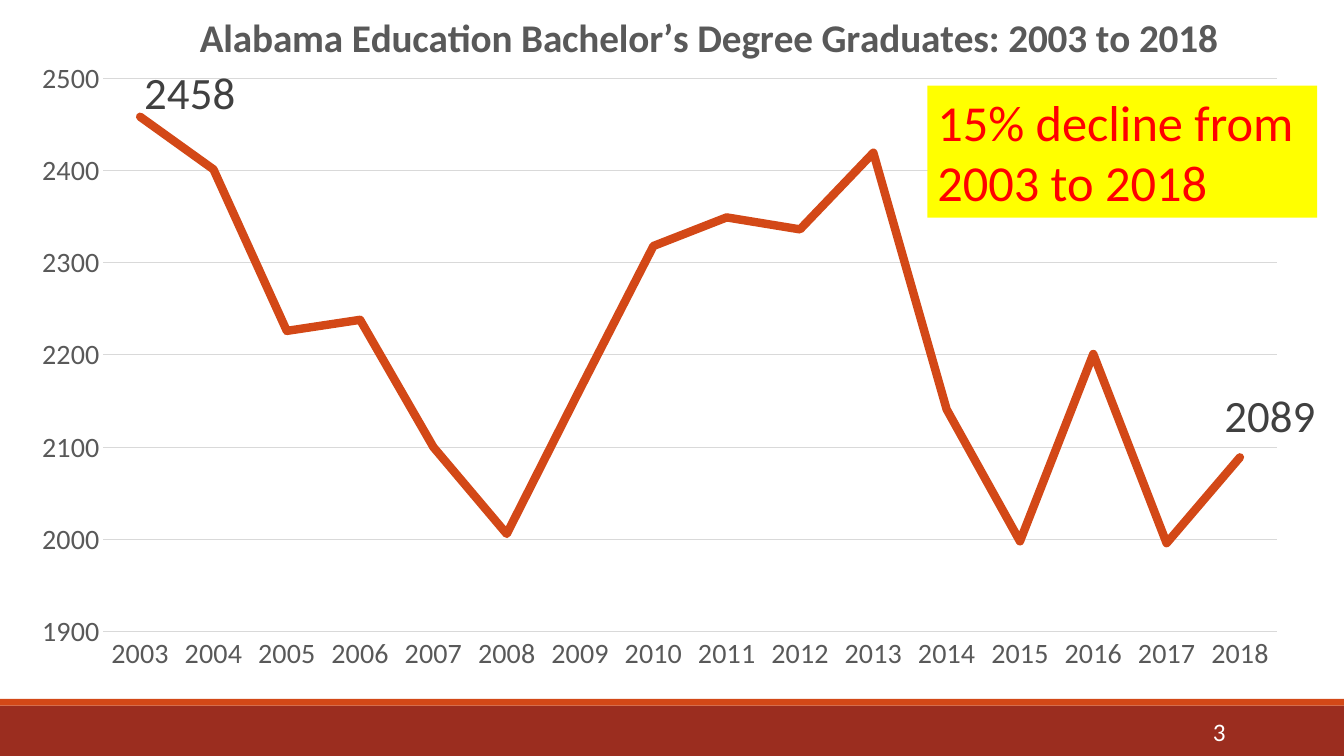
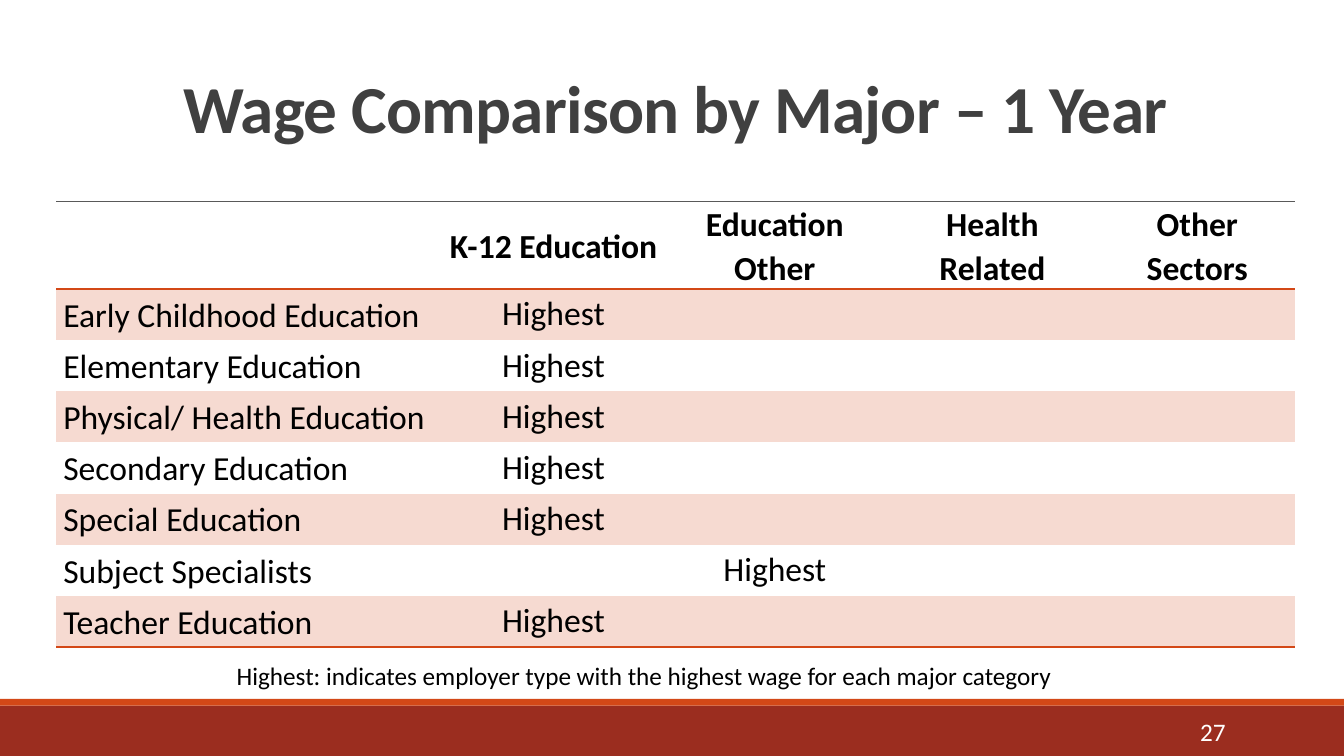
from dataclasses import dataclass

from lxml import etree
from pptx import Presentation
from pptx.chart.data import CategoryChartData
from pptx.dml.color import RGBColor
from pptx.enum.chart import XL_CHART_TYPE, XL_LABEL_POSITION, XL_TICK_MARK
from pptx.enum.shapes import MSO_SHAPE
from pptx.enum.text import MSO_ANCHOR, PP_ALIGN
from pptx.oxml import parse_xml
from pptx.oxml.ns import nsdecls, qn
from pptx.util import Emu, Inches, Pt

COLUMNS, ROWS = 160, 90
UNIT = Inches(1) / 12  # one grid column or row


@dataclass(frozen=True)
class Theme:
    font: str = "Calibri"
    accent: str = "D34817"
    band: str = "9B2D1F"
    tint: str = "F6DAD1"
    ink: str = "000000"
    title_ink: str = "404040"
    muted: str = "595959"
    grid: str = "D9D9D9"
    paper: str = "FFFFFF"
    alert: str = "FF0000"
    highlight: str = "FFFF00"
    title_size: int = 48
    callout_size: int = 36
    label_size: int = 32
    chart_title_size: int = 28
    table_size: int = 24
    axis_size: int = 20
    small_size: int = 18


THEME = Theme()


@dataclass(frozen=True)
class Box:
    """A rectangle counted in grid columns and rows."""
    left: float
    top: float
    width: float
    height: float

    def area(self, left, top, width, height):
        return Box(self.left + left, self.top + top, width, height)

    def place(self):
        return [Emu(round(n * UNIT)) for n in (self.left, self.top, self.width, self.height)]


def color(value):
    return RGBColor.from_string(value)


def style_font(font, size, ink, bold=False):
    font.name, font.size, font.bold = THEME.font, Pt(size), bold
    font.color.rgb = color(ink)


def write(frame, text, size, ink, bold=False, align=PP_ALIGN.LEFT, spacing=1.0):
    para = frame.paragraphs[0]
    span = para.add_run()
    span.text = text
    para.alignment, para.line_spacing = align, spacing
    style_font(para.font, size, ink, bold)
    return span


def add_text(page, box, text, size, ink, anchor=MSO_ANCHOR.TOP, **style):
    frame = page.shapes.add_textbox(*box.place()).text_frame
    frame.word_wrap = True
    frame.vertical_anchor = anchor
    return write(frame, text, size, ink, **style)


def add_block(page, box, fill):
    block = page.shapes.add_shape(MSO_SHAPE.RECTANGLE, *box.place())
    block.shadow.inherit = False
    block.fill.solid()
    block.fill.fore_color.rgb = color(fill)
    block.line.fill.background()
    return block


def add_page(deck, number):
    """Add a blank page with the footer bands and its number."""
    page = deck.slides.add_slide(deck.slide_layouts[6])
    box = Box(0, 0, COLUMNS, ROWS)
    add_block(page, box.area(0, 84, COLUMNS, 6), THEME.band)
    add_block(page, box.area(0, 83.2, COLUMNS, 0.8), THEME.accent)
    add_text(page, box.area(130, 84.7, 17.1, 4.8), number, THEME.small_size,
             THEME.paper, anchor=MSO_ANCHOR.MIDDLE, align=PP_ALIGN.RIGHT)
    return page, box


def set_layout(parent, index, inner=False, edge=False, **percent):
    """Give a chart element a manual layout, in percent of the chart's size."""
    for old in parent.findall(qn("c:layout")):
        parent.remove(old)
    layout = etree.Element(qn("c:layout"))
    manual = etree.SubElement(layout, qn("c:manualLayout"))
    if inner:
        etree.SubElement(manual, qn("c:layoutTarget")).set("val", "inner")
    if edge:
        for name in ("xMode", "yMode"):
            etree.SubElement(manual, qn(f"c:{name}")).set("val", "edge")
    for name, value in percent.items():
        etree.SubElement(manual, qn(f"c:{name}")).set("val", str(round(value / 100, 4)))
    parent.insert(index, layout)


def style_axes(chart):
    for axis in (chart.category_axis, chart.value_axis):
        axis.major_tick_mark = axis.minor_tick_mark = XL_TICK_MARK.NONE
        style_font(axis.tick_labels.font, THEME.axis_size, THEME.muted)
    values = chart.value_axis
    values.minimum_scale, values.maximum_scale, values.major_unit = 1900, 2500, 100
    values.tick_labels.number_format = "###0"
    values.tick_labels.number_format_is_linked = False
    values.format.line.fill.background()
    for line in (chart.category_axis.format.line, values.major_gridlines.format.line):
        line.color.rgb, line.width = color(THEME.grid), Pt(0.75)


def style_series(series, label_shifts):
    """Style the line; label_shifts maps a point to its label's shift in percent."""
    series.smooth = False
    series.format.line.color.rgb = color(THEME.accent)
    series.format.line.width = Pt(6)
    element = series._element
    element.xpath("c:spPr/a:ln")[0].set("cap", "rnd")
    series.data_labels.show_value = False
    for leader in element.xpath("c:dLbls/c:showLeaderLines"):
        leader.set("val", "0")
    for index, (across, down) in label_shifts.items():
        label = series.points[index].data_label
        style_font(label.font, THEME.label_size, THEME.title_ink)
        label.position = XL_LABEL_POSITION.RIGHT
        parent = element.xpath(f"c:dLbls/c:dLbl[c:idx/@val='{index}']")[0]
        set_layout(parent, 1, x=across, y=down)


def add_line_chart(page, box, title, first_year, graduates):
    data = CategoryChartData(number_format="###0")
    data.categories = [str(first_year + i) for i in range(len(graduates))]
    data.add_series("Series 1", graduates)
    chart = page.shapes.add_chart(XL_CHART_TYPE.LINE, *box.place(), data).chart
    style_font(chart.font, THEME.axis_size, THEME.ink)
    chart.has_legend = False
    chart.plots[0].vary_by_categories = False
    chart.has_title = True
    write(chart.chart_title.text_frame, title, THEME.chart_title_size, THEME.muted, bold=True)
    style_axes(chart)
    style_series(chart.plots[0].series[0], {0: (0, -3), len(graduates) - 1: (-1.5, -5.4)})

    space = chart._chartSpace
    set_layout(space.xpath("c:chart/c:title")[0], 1, edge=True, x=13.4, y=0.6)
    set_layout(space.xpath("c:chart/c:plotArea")[0], 0, inner=True, edge=True,
               x=6.6, y=10.5, w=89.3, h=74.5)
    space.find(qn("c:chart")).addnext(
        parse_xml(f'<c:spPr {nsdecls("c", "a")}><a:noFill/><a:ln><a:noFill/></a:ln></c:spPr>'))


def add_callout(page, box, text):
    frame = add_block(page, box, THEME.highlight).text_frame
    frame.word_wrap = True
    frame.vertical_anchor = MSO_ANCHOR.TOP
    write(frame, text, THEME.callout_size, THEME.alert)


def set_border(cell, side, ink):
    """Draw one horizontal cell border; set the bottom (B) before the top (T)."""
    cell._tc.get_or_add_tcPr().insert(0, parse_xml(
        f'<a:ln{side} {nsdecls("a")} w="12700"><a:solidFill>'
        f'<a:srgbClr val="{ink}"/></a:solidFill></a:ln{side}>'))


def fill_cell(cell, text, is_header, is_label):
    cell.vertical_anchor = MSO_ANCHOR.MIDDLE
    if is_header or is_label:
        cell.margin_left = cell.margin_right = Inches(0.07)
        cell.margin_top = cell.margin_bottom = 0
    if text:
        write(cell.text_frame, text, THEME.table_size, THEME.ink, bold=is_header,
              align=PP_ALIGN.LEFT if is_label else PP_ALIGN.CENTER,
              spacing=1.07 if is_header or is_label else 1.0)


def add_wage_table(page, box, widths, header_height, row_height, headers, majors):
    """Draw the table; majors pairs each name with its highest-paying column."""
    rows = [["", *headers]]
    for name, best in majors:
        rows.append([name] + ["Highest" if head == best else "" for head in headers])
    table = page.shapes.add_table(len(rows), len(widths), *box.place()).table
    table.first_row = table.horz_banding = False
    table._tbl.tblPr.find(qn("a:tableStyleId")).text = "{2D5ABB26-0587-4C30-8999-92F81FD0307C}"
    for column, width in zip(table.columns, widths):
        column.width = Emu(round(width * UNIT))
    for r, texts in enumerate(rows):
        table.rows[r].height = Emu(round((row_height if r else header_height) * UNIT))
        for c, text in enumerate(texts):
            cell = table.cell(r, c)
            fill_cell(cell, text, r == 0, c == 0)
            if r % 2:
                cell.fill.solid()
                cell.fill.fore_color.rgb = color(THEME.tint)
            else:
                cell.fill.background()
            if r in (0, len(rows) - 1):
                set_border(cell, "B", THEME.accent)
            if r == 0:
                set_border(cell, "T", THEME.muted)


def add_graduates_page(deck):
    page, box = add_page(deck, "3")
    graduates = [2458, 2401, 2226, 2238, 2100, 2006, 2163, 2318,
                 2349, 2336, 2419, 2141, 1998, 2201, 1996, 2089]
    add_line_chart(page, box.area(2, 0, 156.4, 88.5),
                   "Alabama Education Bachelor’s Degree Graduates: 2003 to 2018",
                   2003, graduates)
    add_callout(page, box.area(110.4, 10.2, 46.4, 15.7), "15% decline from 2003 to 2018")


def add_wages_page(deck):
    page, box = add_page(deck, "27")
    title = add_text(page, box.area(14.4, 3.7, 132, 19.1), "Wage Comparison by Major – 1 Year",
                     THEME.title_size, THEME.title_ink, anchor=MSO_ANCHOR.MIDDLE,
                     bold=True, align=PP_ALIGN.CENTER, spacing=0.9)
    title._r.get_or_add_rPr().set("spc", "-50")
    headers = ["K-12 Education", "Education Other", "Health Related", "Other Sectors"]
    school, other = headers[:2]
    majors = [
        ("Early Childhood Education", school),
        ("Elementary Education", school),
        ("Physical/ Health Education", school),
        ("Secondary Education", school),
        ("Special Education", school),
        ("Subject Specialists", other),
        ("Teacher Education", school),
    ]
    add_wage_table(page, box.area(6.7, 24, 147.5, 53), [46, 26.4, 26.3, 25.5, 23.3],
                   10.4, 6.09, headers, majors)
    add_text(page, box.area(27, 78, 106.8, 4.8),
             "Highest: indicates employer type with the highest wage for each major category",
             THEME.small_size, THEME.ink)


def main():
    deck = Presentation()
    deck.slide_width = Emu(round(COLUMNS * UNIT))
    deck.slide_height = Emu(round(ROWS * UNIT))
    add_graduates_page(deck)
    add_wages_page(deck)
    deck.save("out.pptx")


if __name__ == "__main__":
    main()
